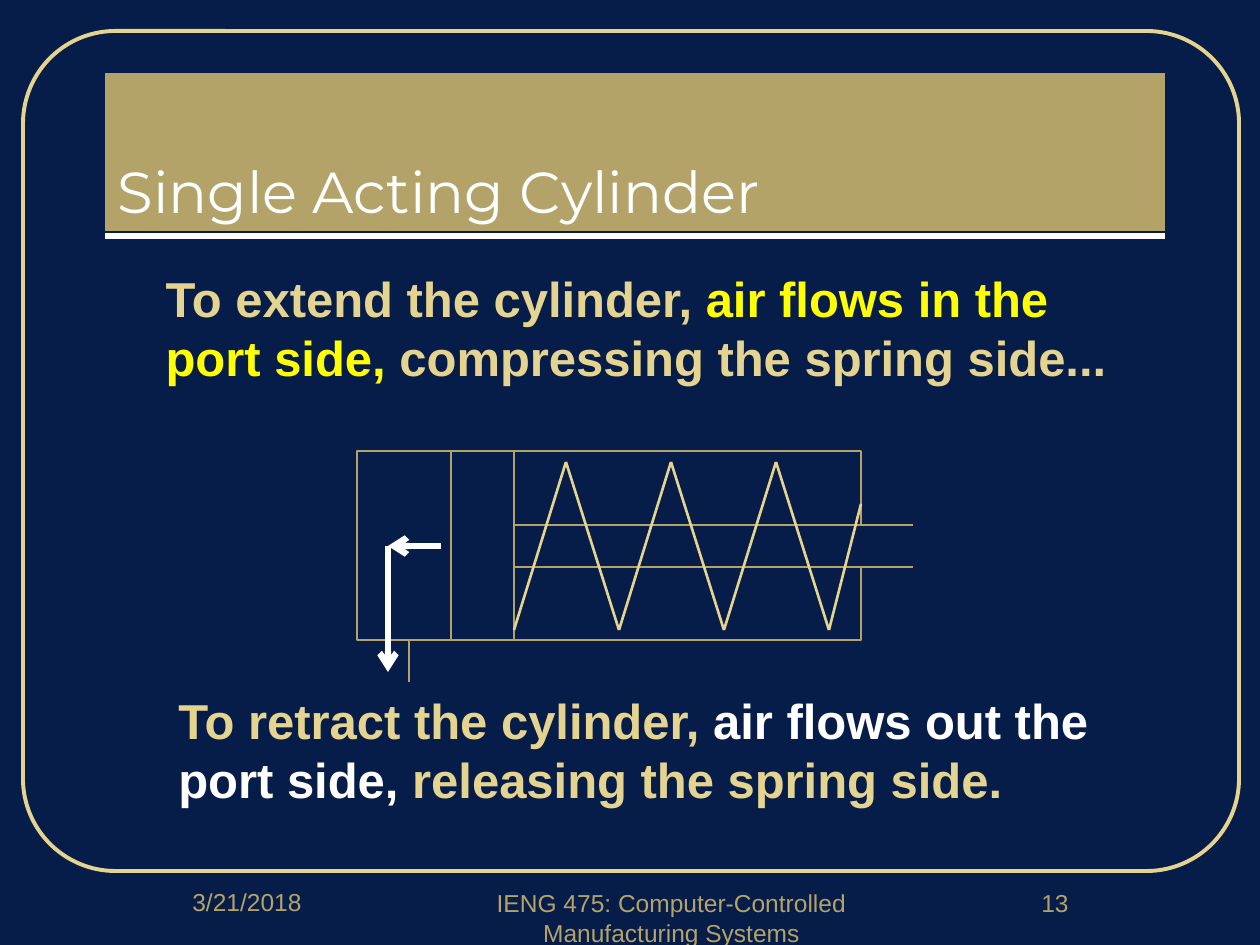
from itertools import pairwise

from lxml.etree import SubElement
from pptx import Presentation
from pptx.dml.color import RGBColor
from pptx.enum.shapes import MSO_CONNECTOR, MSO_SHAPE
from pptx.enum.text import MSO_ANCHOR as Anchor, MSO_AUTO_SIZE as AutoSize, PP_ALIGN as Align
from pptx.oxml.ns import qn
from pptx.util import Pt

EMU_PER_PX = 914400 / 126
NAVY, GOLD, SAND, WHITE, YELLOW = "071D49", "B3A369", "E4D490", "FFFFFF", "FFFF00"


def px(*lengths):
    """Turn pixel lengths into EMU."""
    return [round(length * EMU_PER_PX) for length in lengths]


def paint(color_format, color):
    """Set a colour from a hex string."""
    color_format.rgb = RGBColor.from_string(color)


def fill_shape(shape, color):
    """Give a shape a solid fill."""
    shape.fill.solid()
    paint(shape.fill.fore_color, color)


def place(shape, box):
    """Move and size a shape."""
    shape.left, shape.top, shape.width, shape.height = px(*box)


def add_run(paragraph, text, size, color, font="Arial", bold=False):
    """Append one formatted run."""
    run = paragraph.add_run()
    run.text = text
    run.font.name, run.font.size, run.font.bold = font, Pt(size), bold
    paint(run.font.color, color)


def add_box(slide, preset, box, fill=None, line=None, width=1.5):
    """Add a preset shape with an optional fill and outline."""
    shape = slide.shapes.add_shape(preset, *px(*box))
    shape.shadow.inherit = False
    if fill:
        fill_shape(shape, fill)
    else:
        shape.fill.background()
    if line:
        paint(shape.line.color, line)
        shape.line.width = Pt(width)
    else:
        shape.line.fill.background()
    return shape


def add_line(slide, start, end, color, width=1.5, arrow=False):
    """Add a straight line, with an arrowhead at its end if asked."""
    line = slide.shapes.add_connector(MSO_CONNECTOR.STRAIGHT, *px(*start, *end))
    paint(line.line.color, color)
    line.line.width = Pt(width)
    properties = line._element.spPr
    if arrow:
        SubElement(properties.find(qn("a:ln")), qn("a:tailEnd"), type="arrow")
    SubElement(properties, qn("a:effectLst"))


def add_title(slide, box, text):
    """Fill the title placeholder as a gold band."""
    title = slide.shapes.title
    place(title, box)
    fill_shape(title, GOLD)
    frame = title.text_frame
    frame.vertical_anchor, frame.auto_size = Anchor.BOTTOM, AutoSize.NONE
    frame.paragraphs[0].alignment = Align.LEFT
    add_run(frame.paragraphs[0], text, 33, WHITE, "Montserrat")


def write_statement(shape, runs):
    """Write a bold bulleted statement from text and colour pairs."""
    frame = shape.text_frame
    frame.word_wrap, frame.auto_size = True, AutoSize.NONE
    paragraph = frame.paragraphs[0]
    properties = paragraph._p.get_or_add_pPr()
    indent = px(48)[0]
    properties.set("marL", str(indent))
    properties.set("indent", str(-indent))
    before = SubElement(properties, qn("a:spcBef"))
    SubElement(before, qn("a:spcPct"), val="20000")
    bullet_color = SubElement(properties, qn("a:buClr"))
    SubElement(bullet_color, qn("a:srgbClr"), val=NAVY)
    SubElement(properties, qn("a:buSzPct"), val="70000")
    SubElement(properties, qn("a:buFont"), typeface="Arial")
    SubElement(properties, qn("a:buChar"), char="●")
    for text, color in runs:
        add_run(paragraph, text, 28, color, bold=True)


def add_footer(slide, box, text):
    """Add one centred footer text."""
    frame = slide.shapes.add_textbox(*px(*box)).text_frame
    frame.word_wrap = True
    frame.paragraphs[0].alignment = Align.CENTER
    add_run(frame.paragraphs[0], text, 14, GOLD)


def add_cylinder(slide):
    """Draw the cylinder with its port, air flow, rod, piston and spring."""
    left, top, right, bottom = 357, 451, 861, 640
    add_box(slide, MSO_SHAPE.RECTANGLE, (left, top, right - left, bottom - top), NAVY, GOLD)
    add_line(slide, (409, bottom), (409, 682), GOLD)
    add_line(slide, (388, 546), (388, 672), WHITE, 3.5, arrow=True)
    add_line(slide, (441, 546), (388, 546), WHITE, 3.5, arrow=True)

    rod_left, rod_right, rod_top, rod_bottom = 514, 913, 525, 567
    rod = (rod_left, rod_top, rod_right - rod_left, rod_bottom - rod_top)
    add_box(slide, MSO_SHAPE.RECTANGLE, rod, NAVY)
    for y in (rod_top, rod_bottom):
        add_line(slide, (rod_left, y), (rod_right, y), GOLD)
    add_box(slide, MSO_SHAPE.RECTANGLE, (451, top, 63, bottom - top), NAVY, GOLD)

    coils = [(rod_left + 105 * i // 2, 462 if i % 2 else 630) for i in range(7)]
    for start, end in pairwise([*coils, (right, 504)]):
        add_line(slide, start, end, SAND)


def main():
    """Build and save the slide."""
    presentation = Presentation()
    presentation.slide_width, presentation.slide_height = px(1260, 945)
    slide = presentation.slides.add_slide(presentation.slide_layouts[1])
    fill_shape(slide.background, NAVY)

    frame = add_box(slide, MSO_SHAPE.ROUNDED_RECTANGLE, (23, 31, 1216, 840), line=SAND, width=2.25)
    frame.adjustments[0] = 0.11
    add_line(slide, (105, 236), (1165, 236), WHITE, 3)
    add_footer(slide, (105, 881, 284, 63), "3/21/2018")
    add_footer(slide, (451, 882, 441, 63), "IENG 475: Computer-Controlled Manufacturing Systems")
    add_footer(slide, (945, 882, 220, 63), "13")

    add_title(slide, (105, 73, 1060, 158), "Single Acting Cylinder")
    body = slide.placeholders[1]
    place(body, (105, 262, 1060, 111))
    write_statement(body, [
        ("To extend the cylinder, ", SAND),
        ("air flows in the port side, ", YELLOW),
        ("compressing the spring side...", SAND),
    ])
    write_statement(slide.shapes.add_textbox(*px(118, 684, 1047, 136)), [
        ("To retract the cylinder, ", SAND),
        ("air flows out the port side, ", WHITE),
        ("releasing the spring side.", SAND),
    ])
    add_cylinder(slide)
    presentation.save("out.pptx")


if __name__ == "__main__":
    main()
